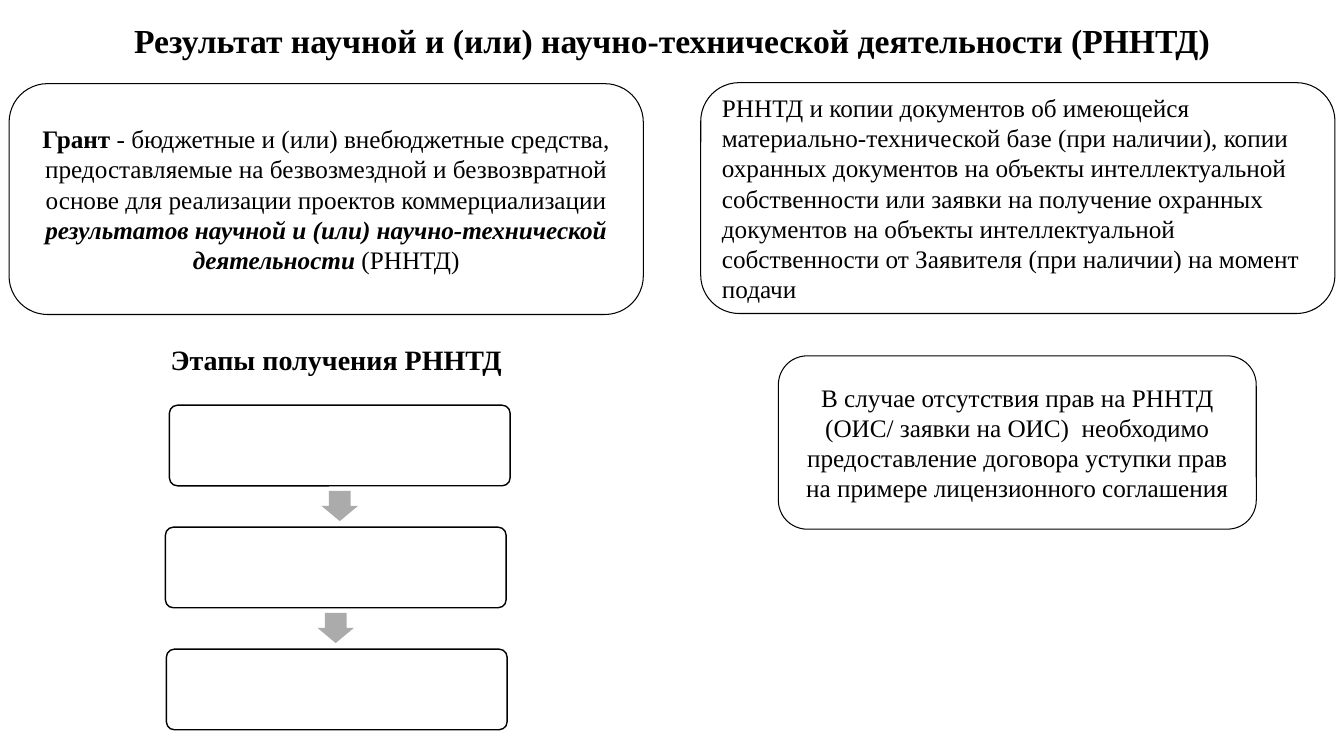
from dataclasses import dataclass

from pptx import Presentation
from pptx.dml.color import RGBColor
from pptx.enum.shapes import MSO_SHAPE
from pptx.enum.text import MSO_ANCHOR, PP_ALIGN
from pptx.util import Emu, Pt


@dataclass(frozen=True)
class Theme:
    font: str = "Times New Roman"
    ink: RGBColor = RGBColor(0, 0, 0)
    paper: RGBColor = RGBColor(255, 255, 255)
    arrow: RGBColor = RGBColor(0xAB, 0xAB, 0xAB)
    title: int = 24
    heading: int = 20
    body: int = 18


@dataclass(frozen=True)
class Box:
    left: int
    top: int
    width: int
    height: int

    def emu(self):
        return [px(n) for n in (self.left, self.top, self.width, self.height)]


THEME = Theme()
EMU_PER_PX = 9144
STAGE_SHIFTS = (4, 0, 1)


def px(length):
    return Emu(round(length * EMU_PER_PX))


def write(frame, runs, size, align=PP_ALIGN.CENTER, anchor=MSO_ANCHOR.MIDDLE):
    frame.word_wrap = True
    frame.vertical_anchor = anchor
    paragraph = frame.paragraphs[0]
    paragraph.alignment = align
    for text, bold, italic in runs:
        run = paragraph.add_run()
        run.text = text
        font = run.font
        font.name, font.size = THEME.font, Pt(size)
        font.bold, font.italic = bold, italic
        font.color.rgb = THEME.ink


def add_figure(slide, kind, box, fill=None, line_width=None):
    figure = slide.shapes.add_shape(kind, *box.emu())
    figure.shadow.inherit = False
    if fill is None:
        figure.fill.background()
    else:
        figure.fill.solid()
        figure.fill.fore_color.rgb = fill
    if line_width is None:
        figure.line.fill.background()
    else:
        figure.line.color.rgb = THEME.ink
        figure.line.width = Pt(line_width)
    return figure


def add_title(slide, box, text):
    title = slide.shapes.title
    title.left, title.top, title.width, title.height = box.emu()
    write(title.text_frame, [(text, True, False)], THEME.title, anchor=MSO_ANCHOR.TOP)


def add_note(slide, box, runs, align=PP_ALIGN.CENTER):
    note = add_figure(slide, MSO_SHAPE.ROUNDED_RECTANGLE, box, line_width=0.75)
    write(note.text_frame, runs, THEME.body, align)


def add_stages(slide, box, heading):
    caption = slide.shapes.add_textbox(*Box(box.left, box.top, box.width, 44).emu())
    write(caption.text_frame, [(heading, True, False)], THEME.heading, anchor=MSO_ANCHOR.TOP)
    stage_width, stage_height, pitch = 338, 80, 121
    arrow_width, arrow_height = 36, 30
    first_top = box.top + box.height - stage_height - pitch * (len(STAGE_SHIFTS) - 1)
    for index, shift in enumerate(STAGE_SHIFTS):
        stage = Box(box.left + 164 + shift, first_top + index * pitch, stage_width, stage_height)
        frame = add_figure(slide, MSO_SHAPE.ROUNDED_RECTANGLE, stage, THEME.paper, 1)
        frame.adjustments[0] = 0.1
        if index < len(STAGE_SHIFTS) - 1:
            below = Box(
                stage.left + (stage_width - arrow_width) // 2,
                stage.top + stage_height + 5,
                arrow_width,
                arrow_height,
            )
            arrow = add_figure(slide, MSO_SHAPE.DOWN_ARROW, below, THEME.arrow)
            arrow.adjustments[0] = 0.6
            arrow.adjustments[1] = 0.5


def main():
    deck = Presentation()
    deck.slide_width, deck.slide_height = px(1333), px(750)
    slide = deck.slides.add_slide(deck.slide_layouts[5])
    add_title(
        slide,
        Box(0, 15, 1333, 50),
        "Результат научной и (или) научно-технической деятельности (РННТД)",
    )
    add_note(slide, Box(9, 83, 629, 229), [
        ("Грант ", True, False),
        ("- бюджетные и (или) внебюджетные средства, предоставляемые на безвозмездной "
         "и безвозвратной основе для реализации проектов коммерциализации ", False, False),
        ("результатов научной и (или) научно-технической деятельности ", True, True),
        ("(РННТД)", False, False),
    ])
    add_note(slide, Box(695, 82, 629, 229), [
        ("РННТД и копии документов об имеющейся материально-технической базе "
         "(при наличии), копии охранных документов на объекты интеллектуальной "
         "собственности или заявки на получение охранных документов на объекты "
         "интеллектуальной собственности от Заявителя (при наличии) на момент подачи",
         False, False),
    ], PP_ALIGN.LEFT)
    add_note(slide, Box(772, 353, 474, 172), [
        ("В случае отсутствия прав на РННТД (ОИС/ заявки на ОИС)  необходимо "
         "предоставление договора уступки прав на примере лицензионного соглашения",
         False, False),
    ])
    add_stages(slide, Box(0, 335, 667, 389), "Этапы получения РННТД")
    deck.save("out.pptx")


if __name__ == "__main__":
    main()
